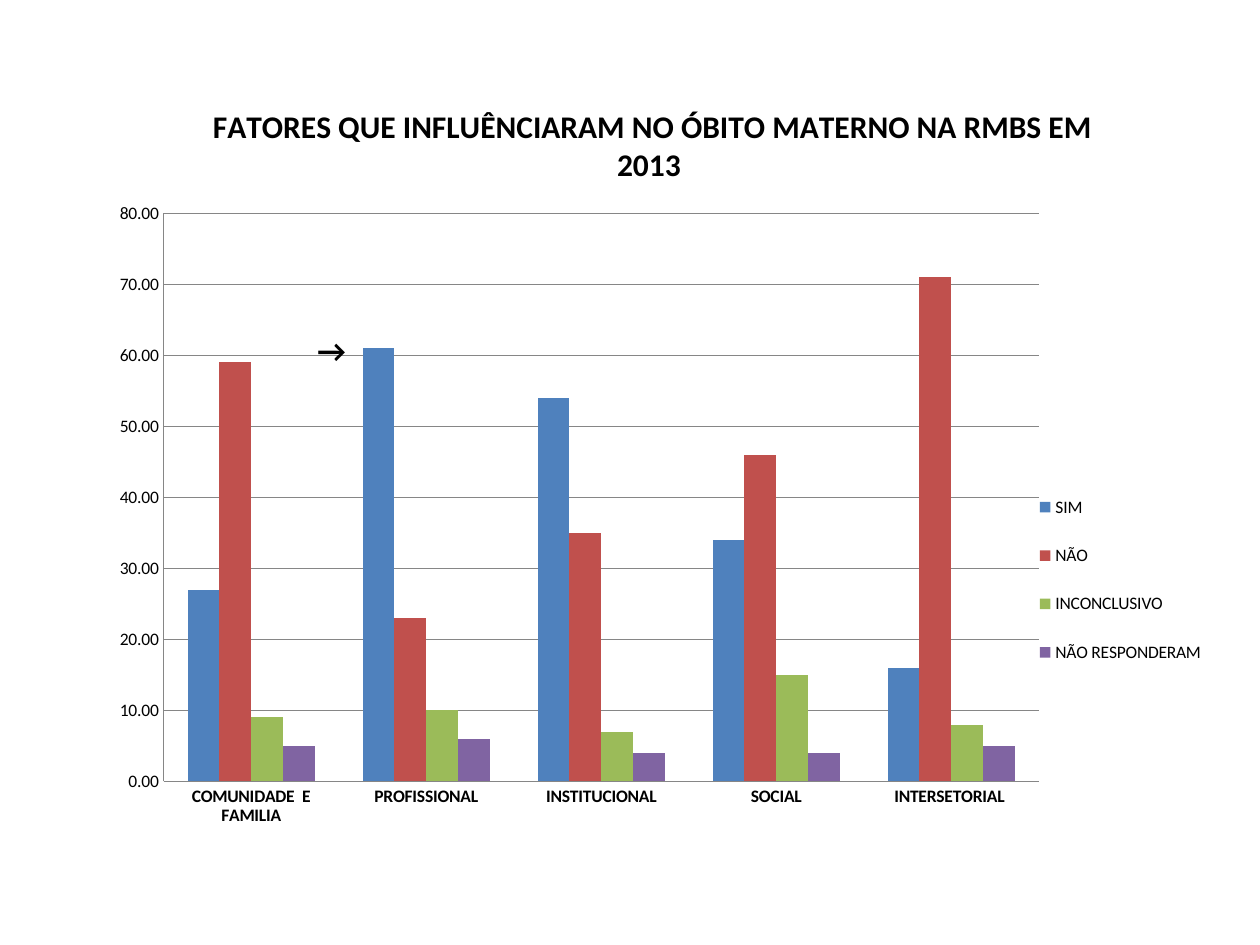
from lxml.etree import SubElement
from pptx import Presentation
from pptx.chart.data import CategoryChartData
from pptx.dml.color import RGBColor
from pptx.enum.chart import XL_CHART_TYPE, XL_LEGEND_POSITION, XL_TICK_MARK
from pptx.oxml.ns import qn
from pptx.util import Inches, Pt

FONT = "Calibri"
BLACK = "000000"
GRID = "868686"
CATEGORIES = ["COMUNIDADE  E FAMILIA", "PROFISSIONAL", "INSTITUCIONAL", "SOCIAL", "INTERSETORIAL "]
SERIES = [
    ("SIM", (27, 61, 54, 34, 16), "4F81BD"),
    ("NÃO", (59, 23, 35, 46, 71), "C0504D"),
    ("INCONCLUSIVO", (9, 10, 7, 15, 8), "9BBB59"),
    ("NÃO RESPONDERAM", (5, 6, 4, 4, 5), "8064A2"),
]


def color(value):
    """Turn a hex string into a colour."""
    return RGBColor.from_string(value)


def style_font(font, size=10, bold=False, fill=BLACK):
    """Set the face, size, weight and colour of a font."""
    font.name = FONT
    font.size = Pt(size)
    font.bold = bold
    font.color.rgb = color(fill)


def write_text(text_frame, text, **style):
    """Write one run of styled text in a text frame."""
    run = text_frame.paragraphs[0].add_run()
    run.text = text
    style_font(run.font, **style)


def place(element, position, **layout):
    """Give a chart part a manual layout, as fractions of the chart."""
    for existing in element.findall(qn("c:layout")):
        element.remove(existing)
    holder = SubElement(element, qn("c:layout"))
    element.insert(position, holder)
    manual = SubElement(holder, qn("c:manualLayout"))
    for name, value in layout.items():
        SubElement(manual, qn(f"c:{name}")).set("val", str(value))


def style_axis(axis, bold=False):
    """Style the line, tick marks and labels of an axis."""
    axis.major_tick_mark = axis.minor_tick_mark = XL_TICK_MARK.NONE
    axis.format.line.color.rgb = color(GRID)
    style_font(axis.tick_labels.font, bold=bold)


def add_factor_chart(slide):
    """Add the column chart of the factors behind maternal deaths."""
    data = CategoryChartData(number_format="0.00")
    data.categories = CATEGORIES
    for name, values, _ in SERIES:
        data.add_series(name, values)
    chart = slide.shapes.add_chart(
        XL_CHART_TYPE.COLUMN_CLUSTERED, Inches(0.75), Inches(0.63), Inches(8.86), Inches(6.48), data
    ).chart
    style_font(chart.font)
    plot = chart.plots[0]
    plot.gap_width, plot.overlap, plot.vary_by_categories = 150, 0, False
    for series, (_, _, fill) in zip(plot.series, SERIES):
        series.format.fill.solid()
        series.format.fill.fore_color.rgb = color(fill)
    style_axis(chart.category_axis, bold=True)
    axis = chart.value_axis
    style_axis(axis)
    axis.minimum_scale, axis.maximum_scale, axis.major_unit = 0, 80, 10
    axis.tick_labels.number_format = "0.00"
    axis.tick_labels.number_format_is_linked = False
    axis.major_gridlines.format.line.color.rgb = color(GRID)
    write_text(chart.chart_title.text_frame,
               "FATORES QUE INFLUÊNCIARAM NO ÓBITO MATERNO NA RMBS EM 2013 ", size=18, bold=True)
    chart.has_legend = True
    chart.legend.position = XL_LEGEND_POSITION.RIGHT
    chart.legend.include_in_layout = False
    style_font(chart.legend.font)
    edges = {"xMode": "edge", "yMode": "edge"}
    place(chart.chart_title._element, 1, **edges, x=0.101, y=0.024)
    place(chart.legend._element, 1, **edges, x=0.844, y=0.477, w=0.15, h=0.272)
    place(chart._chartSpace.chart.plotArea, 0, layoutTarget="inner", **edges,
          x=0.062, y=0.164, w=0.784, h=0.696)


def add_text(slide, text, left, top, width, height, **style):
    """Add a wrapping text box with one styled run."""
    box = slide.shapes.add_textbox(Inches(left), Inches(top), Inches(width), Inches(height))
    box.text_frame.word_wrap = True
    write_text(box.text_frame, text, **style)


def main():
    """Build the slide and save it."""
    presentation = Presentation()
    presentation.slide_width, presentation.slide_height = Inches(10), Inches(7.5)
    slide = presentation.slides.add_slide(presentation.slide_layouts[6])
    add_factor_chart(slide)
    add_text(slide, "→", 2.42, 2.58, 0.55, 0.4, size=18, bold=True)
    presentation.save("out.pptx")


if __name__ == "__main__":
    main()
